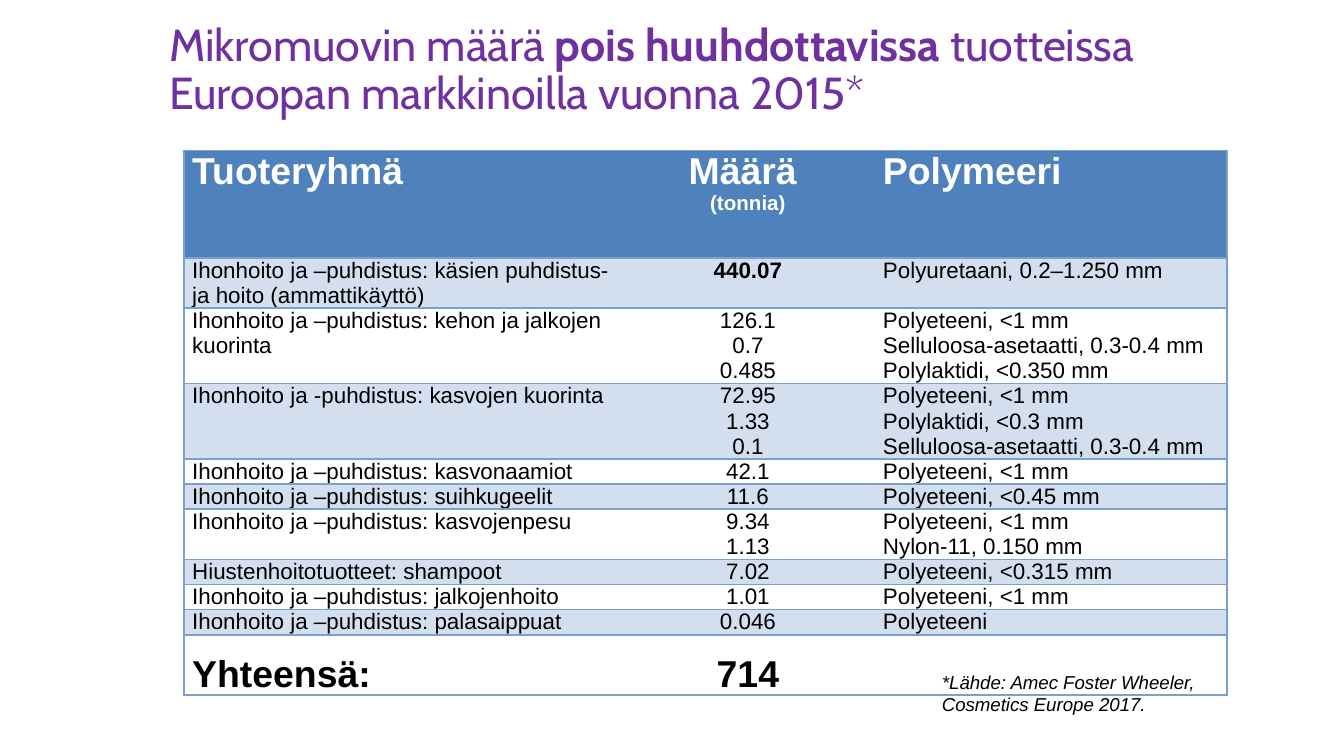
"""Build a slide with a table of microplastic amounts in rinse-off products."""
from pptx import Presentation, util as u
from pptx.dml.color import RGBColor
from pptx.enum import text
from pptx.oxml import parse_xml
from pptx.oxml.ns import nsdecls

WIDE = 10
HIGH = WIDE * 9 / 16
HUES = {"title": "7030A0", "head": "4F81BD", "band": "D3DFEE",
        "edge": "7BA0CD", "white": "FFFFFF", "black": "000000"}
TITLE = [("Mikromuovin määrä ", False), ("pois huuhdottavissa ", True),
         ("tuotteissa Euroopan markkinoilla vuonna 2015*", False)]
HEAD = [["Tuoteryhmä"], ["Määrä ", "(tonnia)"], ["Polymeeri"]]
SKIN = "Ihonhoito ja –puhdistus: "
GROUPS = [
    (SKIN + "käsien puhdistus- ja hoito (ammattikäyttö)",
     ["440.07"], ["Polyuretaani, 0.2–1.250 mm"]),
    (SKIN + "kehon ja jalkojen kuorinta", ["126.1", "0.7", "0.485"],
     ["Polyeteeni, <1 mm", "Selluloosa-asetaatti, 0.3-0.4 mm", "Polylaktidi, <0.350 mm"]),
    ("Ihonhoito ja -puhdistus: kasvojen kuorinta", ["72.95", "1.33", "0.1"],
     ["Polyeteeni, <1 mm", "Polylaktidi, <0.3 mm", "Selluloosa-asetaatti, 0.3-0.4 mm"]),
    (SKIN + "kasvonaamiot", ["42.1"], ["Polyeteeni, <1 mm"]),
    (SKIN + "suihkugeelit", ["11.6"], ["Polyeteeni, <0.45 mm"]),
    (SKIN + "kasvojenpesu", ["9.34", "1.13"], ["Polyeteeni, <1 mm", "Nylon-11, 0.150 mm"]),
    ("Hiustenhoitotuotteet: shampoot", ["7.02"], ["Polyeteeni, <0.315 mm"]),
    (SKIN + "jalkojenhoito", ["1.01"], ["Polyeteeni, <1 mm"]),
    (SKIN + "palasaippuat", ["0.046"], ["Polyeteeni"]),
]
TOTAL = [["Yhteensä:"], ["714"], []]
NOTE = ["*Lähde: Amec Foster Wheeler,", "Cosmetics Europe 2017."]
COLS = [3.25, 1.89, 2.62]
LINE, TOP, FOOT = 0.18, 0.8, 0.45
WRAP = 50
LEFT, MID, JUST = text.PP_ALIGN.LEFT, text.PP_ALIGN.CENTER, text.PP_ALIGN.JUSTIFY


def add_run(para, words, size, hue, bold=False, italic=False, face="Arial"):
    run = para.add_run()
    run.text = words
    font = run.font
    font.name, font.size, font.bold, font.italic = face, u.Pt(size), bold, italic
    font.color.rgb = RGBColor.from_string(HUES[hue])


def add_lines(frame, lines, align, **style):
    for i, (words, size) in enumerate(lines):
        para = frame.paragraphs[0] if i == 0 else frame.add_paragraph()
        para.alignment = align
        add_run(para, words, size, **style)


def set_edges(cell, col):
    shown = {"L": col == 0, "R": col == len(COLS) - 1, "T": True, "B": True}
    for side, on in shown.items():
        paint = f'<a:solidFill><a:srgbClr val="{HUES["edge"]}"/></a:solidFill>' if on else "<a:noFill/>"
        cell._tc.get_or_add_tcPr().append(parse_xml(
            f'<a:ln{side} {nsdecls("a")} w="12700">{paint}</a:ln{side}>'))


def fill_row(grid, row, lists, sizes, aligns, bolds, hue, fill=None):
    for col, words in enumerate(lists):
        cell = grid.cell(row, col)
        cell.margin_left = cell.margin_right = u.Inches(0.06)
        cell.margin_top = cell.margin_bottom = 0
        set_edges(cell, col)
        if fill:
            cell.fill.solid()
            cell.fill.fore_color.rgb = RGBColor.from_string(HUES[fill])
        else:
            cell.fill.background()
        add_lines(cell.text_frame, zip(words, sizes), aligns[col], hue=hue, bold=bolds[col])


def add_title(slide):
    title = slide.shapes.title
    title.left, title.top, title.width, title.height = map(u.Inches, (1.26, 0.16, 7.48, 0.86))
    frame = title.text_frame
    frame.margin_left = frame.margin_right = frame.margin_top = frame.margin_bottom = 0
    frame.vertical_anchor = text.MSO_ANCHOR.TOP
    frame.auto_size = text.MSO_AUTO_SIZE.NONE
    para = frame.paragraphs[0]
    para.alignment, para.line_spacing = LEFT, u.Pt(26)
    for words, bold in TITLE:
        add_run(para, words, 24, "title", bold, face="Cabin")


def add_grid(slide):
    counts = [max(len(sums), 2 if len(name) > WRAP else 1) for name, sums, _ in GROUPS]
    rows = [TOP] + [LINE * n for n in counts] + [FOOT]
    grid = slide.shapes.add_table(len(rows), len(COLS), *map(
        u.Inches, (1.37, 1.12, sum(COLS), sum(rows)))).table
    grid.first_row = grid.horz_banding = False
    for part, width in zip(grid.columns, COLS):
        part.width = u.Inches(width)
    for part, height in zip(grid.rows, rows):
        part.height = u.Inches(height)
    fill_row(grid, 0, HEAD, [20, 11], [LEFT, MID, LEFT], [True] * 3, "white", "head")
    for row, (name, sums, kinds) in enumerate(GROUPS, 1):
        fill_row(grid, row, [[name], sums, kinds], [12] * 3, [LEFT, MID, JUST],
                 [False, row == 1, False], "black", "band" if row % 2 else None)
    last = len(rows) - 1
    fill_row(grid, last, TOTAL, [20], [LEFT, MID, LEFT], [True] * 3, "black")
    for col in range(len(COLS)):
        grid.cell(last, col).vertical_anchor = text.MSO_ANCHOR.BOTTOM


def add_note(slide):
    frame = slide.shapes.add_textbox(*map(u.Inches, (6.91, 4.94, 2.15, 0.44))).text_frame
    frame.word_wrap = False
    frame.auto_size = text.MSO_AUTO_SIZE.SHAPE_TO_FIT_TEXT
    add_lines(frame, [(words, 10) for words in NOTE], LEFT, hue="black", italic=True)


def main():
    deck = Presentation()
    deck.slide_width, deck.slide_height = u.Inches(WIDE), u.Inches(HIGH)
    slide = deck.slides.add_slide(deck.slide_layouts[5])
    add_title(slide)
    add_grid(slide)
    add_note(slide)
    deck.save("out.pptx")


if __name__ == "__main__":
    main()
